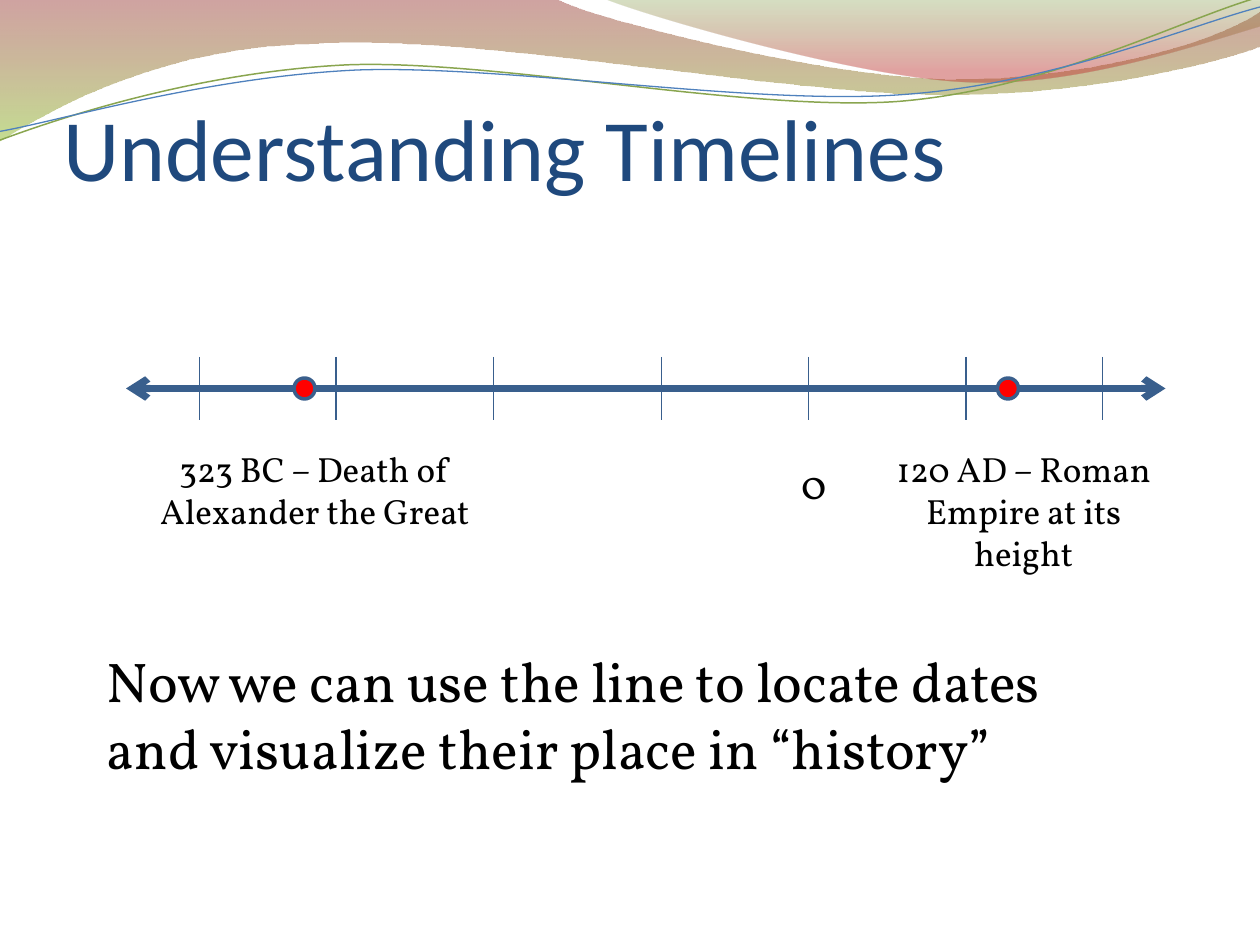
from pptx import Presentation
from pptx.dml.color import RGBColor
from pptx.enum import shapes, text
from pptx.oxml import ns, xmlchemy
from pptx.util import Pt

deck = Presentation()
deck.slide_width, deck.slide_height = Pt(720), Pt(540)
slide = deck.slides.add_slide(deck.slide_layouts[5])
items = slide.shapes


def rgb(code):
    return RGBColor.from_string(code)


def outline(start, parts, close):
    """Draw a path whose parts are (x, y) lines or six-number Bezier curves."""
    pen = items.build_freeform(*map(Pt, start))
    for part in parts:
        spots = zip(map(Pt, part[::2]), map(Pt, part[1::2]))
        pen.add_line_segments(list(spots), close=False)
    if close:
        pen.add_line_segments([], close=True)
    shape = pen.convert_to_shape()
    shape.shadow.inherit = False
    # Turn the three lines of each curve into one Bezier segment
    legs = shape.element.spPr.iter(ns.qn("a:lnTo"))
    legs = iter(list(legs))
    for part in parts:
        group = [next(legs) for _ in part[::2]]
        if len(group) == 3:
            curve = xmlchemy.OxmlElement("a:cubicBezTo")
            group[0].addprevious(curve)
            for leg in group:
                curve.append(leg[0])
                leg.getparent().remove(leg)
    return shape


# Gradient bands: start, parts, then stops of (position, colour, opacity %)
bands = [
    ((0, 0),
     [(317, -1), (343, 12, 478, 45, 546, 45), (614, 45, 690, 27, 720, 6.5),
      (721, 26), (708, 32, 626, 55, 537, 54), (448, 54, 275, 20, 185, 24.5),
      (93, 26, 33, 60, -1, 81), (0, 0)],
     [(0, "973330", 45), (1, "95C238", 55)]),
    ((345, -1),
     [(366, 8, 491, 45, 554, 47), (616, 50, 692, 23, 720, 15), (720, 0),
      (345, -1)],
     [(0, "769537", 30), (0.8, "BE3330", 45)]),
]
for start, parts, stops in bands:
    band = outline(start, parts, True)
    band.line.fill.background()
    band.fill.gradient()
    band.fill.gradient_angle = 270
    for stop, (place, code, _) in zip(band.fill.gradient_stops, stops):
        stop.position, stop.color.rgb = place, rgb(code)
    inks = band.element.spPr.find(ns.qn("a:gradFill")).iter(ns.qn("a:srgbClr"))
    for ink, (_, _, share) in zip(inks, stops):
        alpha = xmlchemy.OxmlElement("a:alpha")
        alpha.set("val", str(share * 1000))
        ink.append(alpha)

# Thin waves, drawn level and then tilted
waves = [
    ((-1.4, 63.1),
     [(34.1, 51.7, 114.3, 29.4, 199.4, 29.5), (284.4, 30.5, 425.9, 67.2, 512.1, 65.2),
      (599.3, 62.3, 676.1, 25.9, 720.6, 15.5)], "89A54F", 0.85),
    ((-1.1, 58.1),
     [(33.1, 53.7, 118.2, 32.6, 204.3, 32.7), (290.3, 33.7, 429.1, 63.8, 515.3, 61.4),
      (601.5, 59.4, 679, 30, 721.4, 21)], "4F81BD", 0.75),
]
for start, parts, code, width in waves:
    wave = outline(start, parts, False)
    wave.rotation = 357.3
    wave.fill.background()
    wave.line.color.rgb, wave.line.width = rgb(code), Pt(width)

# Title, in front of the waves
title = items.title
title.element.getparent().append(title.element)
title.left, title.top, title.width, title.height = Pt(36), Pt(24), Pt(648), Pt(90)
frame = title.text_frame
frame.text = "Understanding Timelines"
look = {"margin_left": 0, "margin_top": Pt(3.6), "margin_right": 0,
        "margin_bottom": 0, "vertical_anchor": text.MSO_ANCHOR.BOTTOM}
for name, value in look.items():
    setattr(frame, name, value)
para = frame.paragraphs[0]
para.alignment = text.PP_ALIGN.LEFT
para.font.name, para.font.size = "Calibri", Pt(50)
para.font.color.rgb = rgb("1F497D")

# Timeline: the axis first, then its ticks
axis = 222
ticks = [114, 192, 282, 378, 462, 552, 630]
lines = [(72, axis, 666, axis, 4)]
lines += [(x, axis - 18, x, axis + 18, 0.75) for x in ticks]
for *ends, width in lines:
    line = items.add_connector(shapes.MSO_CONNECTOR.STRAIGHT, *map(Pt, ends))
    line.line.color.rgb, line.line.width = rgb("395F8D"), Pt(width)
    if width == 4:
        stroke = line.element.spPr.find(ns.qn("a:ln"))
        for tag in ("a:headEnd", "a:tailEnd"):
            tip = xmlchemy.OxmlElement(tag)
            tip.set("type", "arrow")
            stroke.append(tip)
    line.element.spPr.append(xmlchemy.OxmlElement("a:effectLst"))

# Labels: wording, left, top, width, height, size, alignment
mid, left = text.PP_ALIGN.CENTER, text.PP_ALIGN.LEFT
labels = [
    ("0", 444, 258, 42, 36, 24, mid),
    ("Now we can use the line to locate dates and visualize their place in “history”",
     54, 366, 606, 85, 32, left),
    ("120 AD – Roman Empire at its height", 504, 252, 162, 80, 20, mid),
    ("323 BC – Death of Alexander the Great", 66, 252, 228, 55.5, 20, mid),
]
for words, *area, size, align in labels:
    frame = items.add_textbox(*map(Pt, area)).text_frame
    frame.word_wrap = True
    frame.auto_size = text.MSO_AUTO_SIZE.SHAPE_TO_FIT_TEXT
    frame.text = words
    para = frame.paragraphs[0]
    para.alignment = align
    para.font.name, para.font.size = "Vollkorn", Pt(size)
    para.font.color.rgb = rgb("000000")

# Events on the axis
for x in (576, 174):
    dot = items.add_shape(shapes.MSO_SHAPE.FLOWCHART_CONNECTOR,
                          Pt(x - 6), Pt(axis - 6), Pt(12), Pt(12))
    dot.shadow.inherit = False
    dot.fill.solid()
    dot.fill.fore_color.rgb = rgb("FF0000")
    dot.line.color.rgb, dot.line.width = rgb("3A5F8C"), Pt(2)

deck.save("out.pptx")
